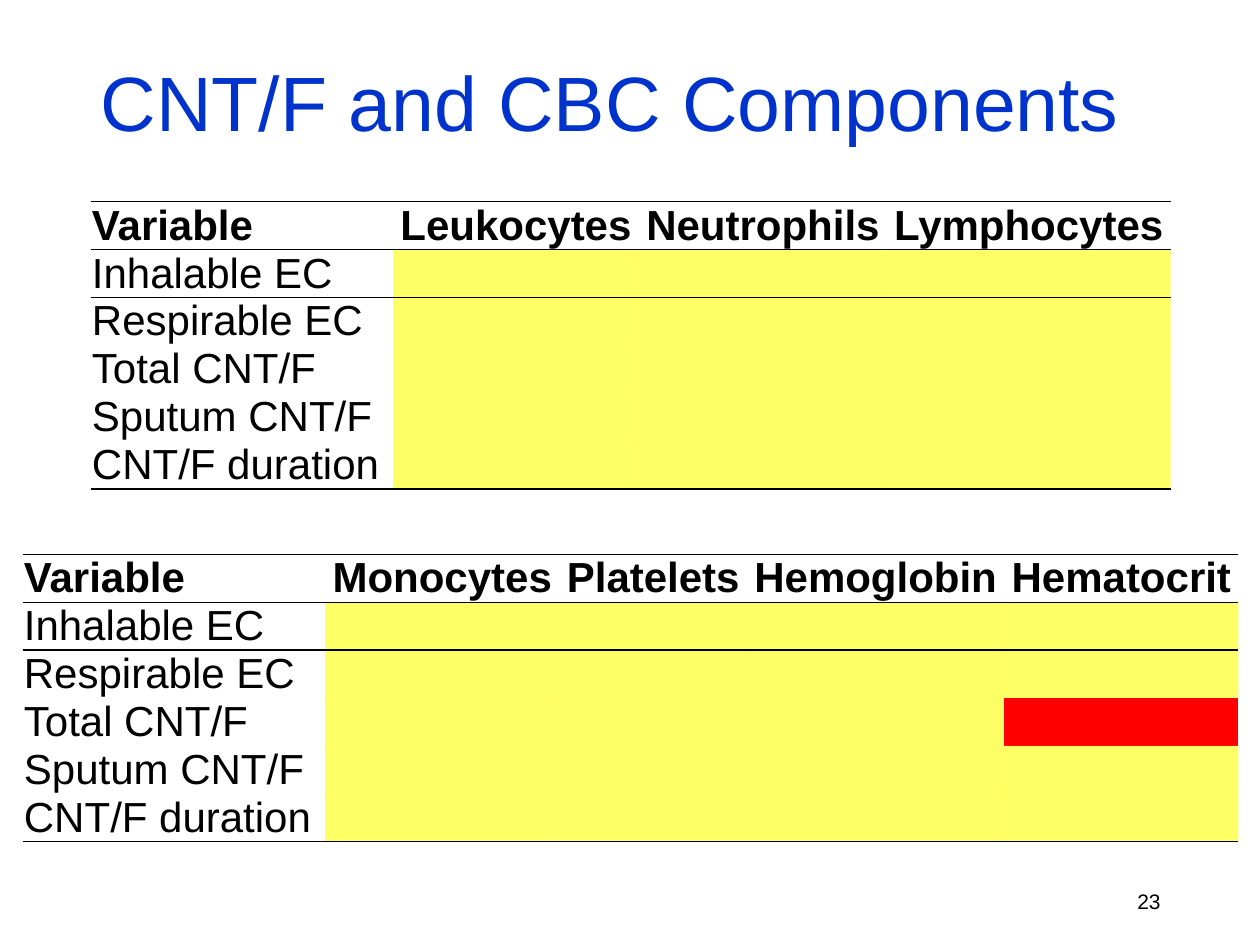
from dataclasses import dataclass

from lxml import etree
from pptx import Presentation
from pptx.dml.color import RGBColor
from pptx.enum.text import MSO_ANCHOR, MSO_AUTO_SIZE, PP_ALIGN
from pptx.oxml.ns import qn
from pptx.util import Inches, Pt

LEFT, CENTER, RIGHT = PP_ALIGN.LEFT, PP_ALIGN.CENTER, PP_ALIGN.RIGHT
MIDDLE = MSO_ANCHOR.MIDDLE
NO_AUTOFIT = MSO_AUTO_SIZE.NONE
TITLE_ONLY = 5
NO_STYLE_NO_GRID = "{2D5ABB26-0587-4C30-8999-92F81FD0307C}"


@dataclass(frozen=True)
class Theme:
    font: str = "Arial"
    title_color: str = "0033CC"
    text_color: str = "000000"
    marked: str = "FFFF00"
    marked_opacity: int = 60
    significant: str = "FF0000"
    title_size: int = 44
    table_size: int = 24
    number_size: int = 12
    rule_width: int = 1


THEME = Theme()
EXPOSURES = ["Inhalable EC", "Respirable EC", "Total CNT/F", "Sputum CNT/F", "CNT/F duration"]
VARIABLE_WIDTH = 2.4
ROW_HEIGHT = 0.38
CELL_FORMAT = {
    "margin_left": Inches(0.01),
    "margin_right": Inches(0.01),
    "margin_top": 0,
    "margin_bottom": 0,
    "vertical_anchor": MIDDLE,
}
FRAME_FORMAT = {"word_wrap": True, "auto_size": NO_AUTOFIT, "vertical_anchor": MIDDLE}


def apply_format(target, values):
    for attribute, value in values.items():
        setattr(target, attribute, value)


def write(frame, text, size, color=THEME.text_color, align=LEFT, bold=False):
    paragraph = frame.paragraphs[0]
    paragraph.alignment = align
    run = paragraph.add_run()
    run.text = text
    apply_format(run.font, {"name": THEME.font, "size": Pt(size), "bold": bold})
    run.font.color.rgb = RGBColor.from_string(color)


def place(box, left, top, width, height):
    apply_format(box, {
        "left": Inches(left), "top": Inches(top),
        "width": Inches(width), "height": Inches(height),
    })
    apply_format(box.text_frame, FRAME_FORMAT)


def add_title(slide, text):
    title = slide.shapes.title
    place(title, 0.7, 0.3, 8.6, 1)
    write(title.text_frame, text, THEME.title_size, THEME.title_color)


def add_slide_number(slide, number):
    box = slide.shapes.add_textbox(0, 0, 0, 0)
    place(box, 7.06, 6.95, 2.25, 0.4)
    write(box.text_frame, number, THEME.number_size, align=RIGHT)


def rule_cell(cell, edges):
    properties = cell._tc.get_or_add_tcPr()
    for edge in edges:
        line = etree.SubElement(properties, qn(f"a:{edge}"), w=str(Pt(THEME.rule_width)))
        fill = etree.SubElement(line, qn("a:solidFill"))
        etree.SubElement(fill, qn("a:srgbClr"), val=THEME.text_color)


def fill_cell(cell, color, opacity=100):
    cell.fill.solid()
    cell.fill.fore_color.rgb = RGBColor.from_string(color)
    if opacity < 100:
        swatch = cell._tc.tcPr.find(f".//{qn('a:solidFill')}[last()]/{qn('a:srgbClr')}")
        swatch = cell._tc.tcPr.find(qn("a:solidFill")).find(qn("a:srgbClr"))
        etree.SubElement(swatch, qn("a:alpha"), val=str(opacity * 1000))


def add_result_table(slide, left, top, components, significant=()):
    headings = ["Variable", *components]
    widths = [VARIABLE_WIDTH, *components.values()]
    row_count = len(EXPOSURES) + 1
    frame = slide.shapes.add_table(
        row_count, len(headings), Inches(left), Inches(top),
        Inches(sum(widths)), Inches(ROW_HEIGHT * row_count))
    table = frame.table
    apply_format(table, {"first_row": False, "horz_banding": False})
    table._tbl.tblPr.find(qn("a:tableStyleId")).text = NO_STYLE_NO_GRID
    for column, width in zip(table.columns, widths):
        column.width = Inches(width)

    edges = {0: ["lnT", "lnB"], 1: ["lnT"], row_count - 1: ["lnB"]}
    for row_index, row in enumerate(table.rows):
        row.height = Inches(ROW_HEIGHT)
        for column_index, cell in enumerate(row.cells):
            apply_format(cell, CELL_FORMAT)
            rule_cell(cell, edges.get(row_index, []))
            if row_index == 0:
                align = CENTER if column_index else LEFT
                write(cell.text_frame, headings[column_index], THEME.table_size,
                      align=align, bold=True)
            elif column_index == 0:
                write(cell.text_frame, EXPOSURES[row_index - 1], THEME.table_size)
            elif (EXPOSURES[row_index - 1], headings[column_index]) in significant:
                fill_cell(cell, THEME.significant)
            else:
                fill_cell(cell, THEME.marked, THEME.marked_opacity)


def main():
    deck = Presentation()
    apply_format(deck, {"slide_width": Inches(10), "slide_height": Inches(7.5)})
    slide = deck.slides.add_slide(deck.slide_layouts[TITLE_ONLY])
    add_title(slide, "CNT/F and CBC Components")
    add_result_table(slide, 0.72, 1.6, {
        "Leukocytes": 1.95, "Neutrophils": 1.97, "Lymphocytes": 2.25,
    })
    add_result_table(slide, 0.18, 4.4, {
        "Monocytes": 1.86, "Platelets": 1.49, "Hemoglobin": 2.04, "Hematocrit": 1.86,
    }, significant={("Total CNT/F", "Hematocrit")})
    add_slide_number(slide, "23")
    deck.save("out.pptx")


if __name__ == "__main__":
    main()
